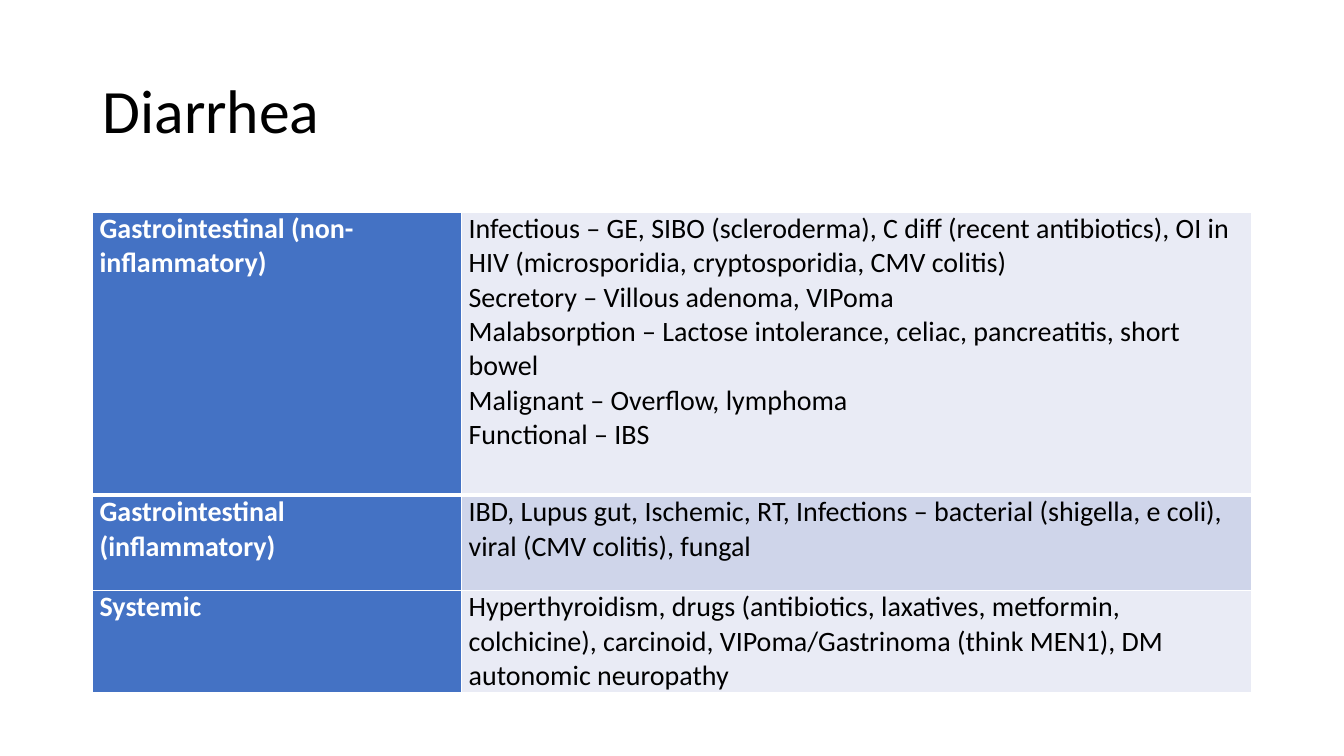
import pptx
import pptx.util
import pptx.dml.color
import pptx.enum.text
import pptx.oxml
import pptx.oxml.ns
from pptx.util import Cm, Pt

# Content
TITLE = "Diarrhea"
CAUSES = [
    ("Gastrointestinal (non-inflammatory)", [
        "Infectious – GE, SIBO (scleroderma), C diff (recent antibiotics), OI in HIV "
        "(microsporidia, cryptosporidia, CMV colitis)",
        "Secretory – Villous adenoma, VIPoma",
        "Malabsorption – Lactose intolerance, celiac, pancreatitis, short bowel",
        "Malignant – Overflow, lymphoma",
        "Functional – IBS",
    ]),
    ("Gastrointestinal (inflammatory)", [
        "IBD, Lupus gut, Ischemic, RT, Infections – bacterial (shigella, e coli), "
        "viral (CMV colitis), fungal",
    ]),
    ("Systemic", [
        "Hyperthyroidism, drugs (antibiotics, laxatives, metformin, colchicine), "
        "carcinoid, VIPoma/Gastrinoma (think MEN1), DM autonomic neuropathy",
    ]),
]
COLORS = {"white": "FFFFFF", "black": "000000", "label": "4472C4",
          "light": "E9EBF5", "dark": "CFD5EA"}
FONT = "Calibri"
LEFT, WIDTH = 2.33, 29.21
COLUMN_WIDTHS = [9.3, 19.91]
ROW_HEIGHTS = [7.14, 2.39, 2.39]


def color(name):
    return pptx.dml.color.RGBColor.from_string(COLORS[name])


def style_font(font, size, color_name, bold=False):
    font.name, font.size, font.bold = FONT, Pt(size), bold
    font.color.rgb = color(color_name)


def set_borders(cell, top, bottom):
    """Draw white borders; top and bottom widths are in points."""
    properties = cell._tc.get_or_add_tcPr()
    widths = {"lnL": 1, "lnR": 1, "lnT": top, "lnB": bottom}
    for position, (tag, width) in enumerate(widths.items()):
        line = pptx.oxml.parse_xml(
            f'<a:{tag} {pptx.oxml.ns.nsdecls("a")} w="{Pt(width)}"><a:solidFill>'
            f'<a:srgbClr val="{COLORS["white"]}"/></a:solidFill></a:{tag}>')
        properties.insert(position, line)


def fill_cell(cell, lines, fill, text_color, bold):
    cell.fill.solid()
    cell.fill.fore_color.rgb = color(fill)
    cell.margin_left = cell.margin_right = Cm(0.18)
    cell.margin_top = cell.margin_bottom = 0
    cell.text = "\n".join(lines)
    for para in cell.text_frame.paragraphs:
        style_font(para.font, 20, text_color, bold)


# Page and title
deck = pptx.Presentation()
deck.slide_width, deck.slide_height = Cm(33.87), Cm(19.05)
page = deck.slides.add_slide(deck.slide_layouts[5])
title = page.shapes.title
title.left, title.top, title.width, title.height = Cm(LEFT), Cm(1.01), Cm(WIDTH), Cm(3.68)
title.text_frame.text = TITLE
title.text_frame.vertical_anchor = pptx.enum.text.MSO_ANCHOR.MIDDLE
heading = title.text_frame.paragraphs[0]
heading.alignment = pptx.enum.text.PP_ALIGN.LEFT
heading.line_spacing = 0.9
style_font(heading.font, 44, "black")

# Table of causes
table = page.shapes.add_table(len(CAUSES), 2, Cm(LEFT), Cm(5.34),
                              Cm(WIDTH), Cm(sum(ROW_HEIGHTS))).table
for column, width in zip(table.columns, COLUMN_WIDTHS):
    column.width = Cm(width)
for index, (label, details) in enumerate(CAUSES):
    table.rows[index].height = Cm(ROW_HEIGHTS[index])
    label_cell, detail_cell = table.cell(index, 0), table.cell(index, 1)
    fill_cell(label_cell, [label], "label", "white", True)
    fill_cell(detail_cell, details, "dark" if index % 2 else "light", "black", False)
    for cell in (label_cell, detail_cell):
        set_borders(cell, top=3 if index == 1 else 1, bottom=3 if index == 0 else 1)

deck.save("out.pptx")
